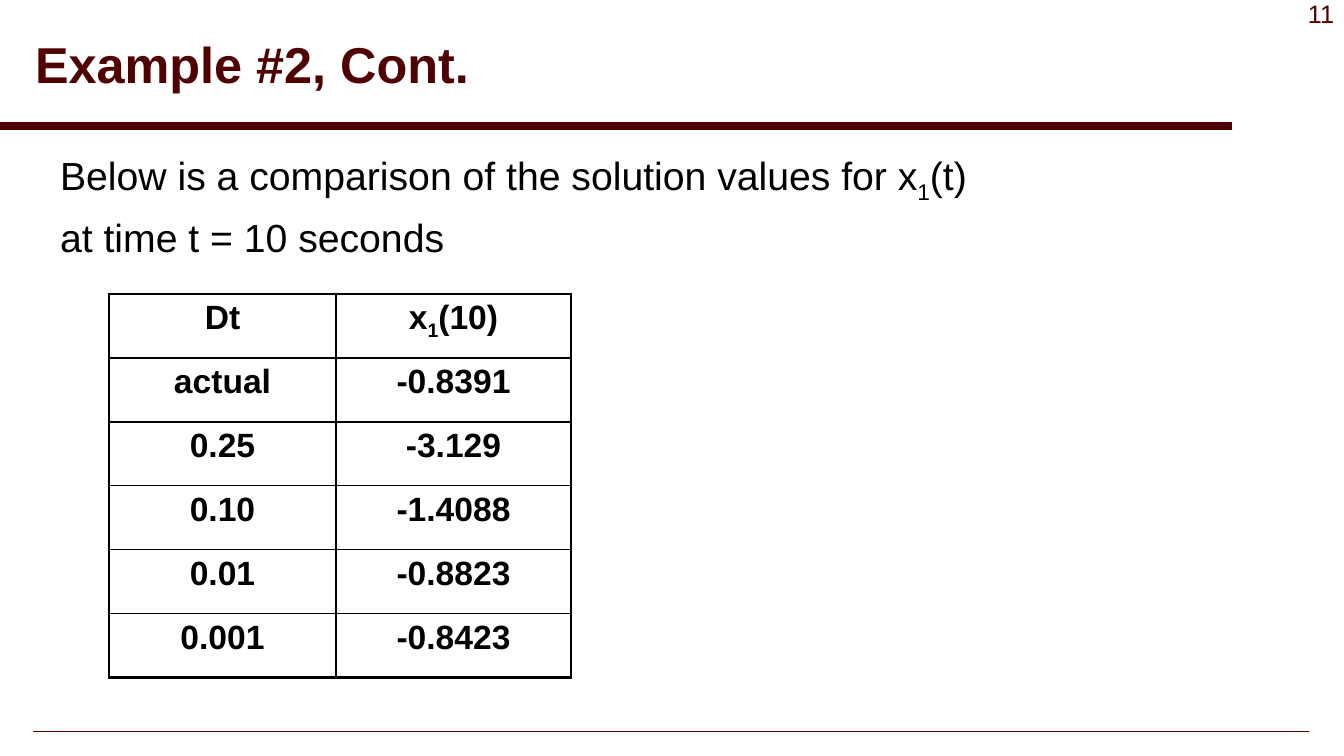
from pptx import Presentation
from pptx.dml.color import RGBColor
from pptx.enum.shapes import MSO_CONNECTOR, MSO_SHAPE
from pptx.enum.text import MSO_ANCHOR, MSO_AUTO_SIZE, PP_ALIGN
from pptx.oxml import parse_xml
from pptx.oxml.ns import nsdecls, qn
from pptx.util import Pt

TITLE = "Example #2, Cont."
PAGE_NUMBER = "11"
SUBSCRIPT_MARK = "_"
BODY = ["Below is a comparison of the solution values for x_1_(t)", "at time t = 10 seconds"]
ROWS = [
    ("Dt", "x_1_(10)"),
    ("actual", "-0.8391"),
    ("0.25", "-3.129"),
    ("0.10", "-1.4088"),
    ("0.01", "-0.8823"),
    ("0.001", "-0.8423"),
]
COLUMN_WIDTHS = [227, 235]
ROW_HEIGHT = 64
OUTER_BORDER, INNER_BORDER = Pt(2.25), Pt(1)

FONT = "Arial"
MAROON = RGBColor(0x50, 0x00, 0x00)
LIGHT_GRAY = RGBColor(0xE3, 0xE1, 0xE1)
BLACK = RGBColor(0x00, 0x00, 0x00)


def px(length):
    return round(length * 914400 / 100.8)


def box(*lengths):
    return [px(length) for length in lengths]


def place(shape, *lengths):
    shape.left, shape.top, shape.width, shape.height = box(*lengths)


def write(paragraph, text, size, color, bold=False, align=PP_ALIGN.LEFT):
    paragraph.alignment = align
    for index, piece in enumerate(text.split(SUBSCRIPT_MARK)):
        run = paragraph.add_run()
        run.text = piece
        run.font.name = FONT
        run.font.size = Pt(size)
        run.font.bold = bold
        run.font.color.rgb = color
        if index % 2:
            run._r.get_or_add_rPr().set("baseline", "-25000")


def set_borders(cell, widths):
    properties = cell._tc.get_or_add_tcPr()
    for index, (side, width) in enumerate(widths.items()):
        properties.insert(index, parse_xml(
            f'<a:ln{side} {nsdecls("a")} w="{width}"><a:solidFill>'
            f'<a:srgbClr val="{BLACK}"/></a:solidFill></a:ln{side}>'))


def add_frame(slide):
    footer = slide.shapes.add_shape(MSO_SHAPE.RECTANGLE, *box(33, 731, 1276, 1))
    footer.shadow.inherit = False
    footer.line.fill.background()
    footer.fill.gradient()
    for stop, color in zip(footer.fill.gradient_stops, (MAROON, LIGHT_GRAY)):
        stop.color.rgb = color
    gradient = footer._element.spPr.find(qn("a:gradFill"))
    gradient.replace(gradient.find(qn("a:lin")), parse_xml(
        f'<a:path {nsdecls("a")} path="shape">'
        '<a:fillToRect l="50000" t="50000" r="50000" b="50000"/></a:path>'))

    rule = slide.shapes.add_connector(MSO_CONNECTOR.STRAIGHT, *box(0, 126, 1232, 126))
    rule.line.color.rgb = MAROON
    rule.line.width = Pt(6)
    rule._element.spPr.append(parse_xml(f'<a:effectLst {nsdecls("a")}/>'))

    number = slide.shapes.add_textbox(*box(1223, -7, 121, 40))
    number.text_frame.word_wrap = True
    write(number.text_frame.paragraphs[0], PAGE_NUMBER, 18, MAROON, align=PP_ALIGN.RIGHT)


def add_title(slide):
    title = slide.shapes.title
    place(title, 25, 8, 1202, 118)
    title.text_frame.auto_size = MSO_AUTO_SIZE.NONE
    title.text_frame.vertical_anchor = MSO_ANCHOR.MIDDLE
    paragraph = title.text_frame.paragraphs[0]
    paragraph.line_spacing = 0.9
    write(paragraph, TITLE, 36, MAROON, bold=True)


def add_body(slide):
    body = slide.placeholders[1]
    place(body, 50, 146, 1151, 110)
    frame = body.text_frame
    frame.auto_size = MSO_AUTO_SIZE.NONE
    for index, text in enumerate(BODY):
        paragraph = frame.add_paragraph() if index else frame.paragraphs[0]
        paragraph.space_before = Pt(6 if index else 0)
        properties = paragraph._p.get_or_add_pPr()
        properties.set("marL", "0")
        properties.set("indent", "0")
        properties.append(parse_xml(f'<a:buNone {nsdecls("a")}/>'))
        write(paragraph, text, 28, BLACK)


def add_comparison(slide):
    last_row, last_column = len(ROWS) - 1, len(COLUMN_WIDTHS) - 1
    table = slide.shapes.add_table(
        len(ROWS), len(COLUMN_WIDTHS),
        *box(109, 294, sum(COLUMN_WIDTHS), ROW_HEIGHT * len(ROWS))).table
    table.first_row = table.horz_banding = False
    for column, width in zip(table.columns, COLUMN_WIDTHS):
        column.width = px(width)
    for row_index, values in enumerate(ROWS):
        table.rows[row_index].height = px(ROW_HEIGHT)
        for column_index, value in enumerate(values):
            cell = table.cell(row_index, column_index)
            cell.fill.background()
            outer_sides = {
                "L": column_index == 0,
                "R": column_index == last_column,
                "T": row_index == 0,
                "B": row_index == last_row,
            }
            set_borders(cell, {side: OUTER_BORDER if outer else INNER_BORDER
                               for side, outer in outer_sides.items()})
            write(cell.text_frame.paragraphs[0], value, 24, BLACK, True, PP_ALIGN.CENTER)


def main():
    presentation = Presentation()
    presentation.slide_width, presentation.slide_height = box(1344, 756)
    slide = presentation.slides.add_slide(presentation.slide_layouts[1])
    add_frame(slide)
    add_title(slide)
    add_comparison(slide)
    add_body(slide)
    presentation.save("out.pptx")


if __name__ == "__main__":
    main()
